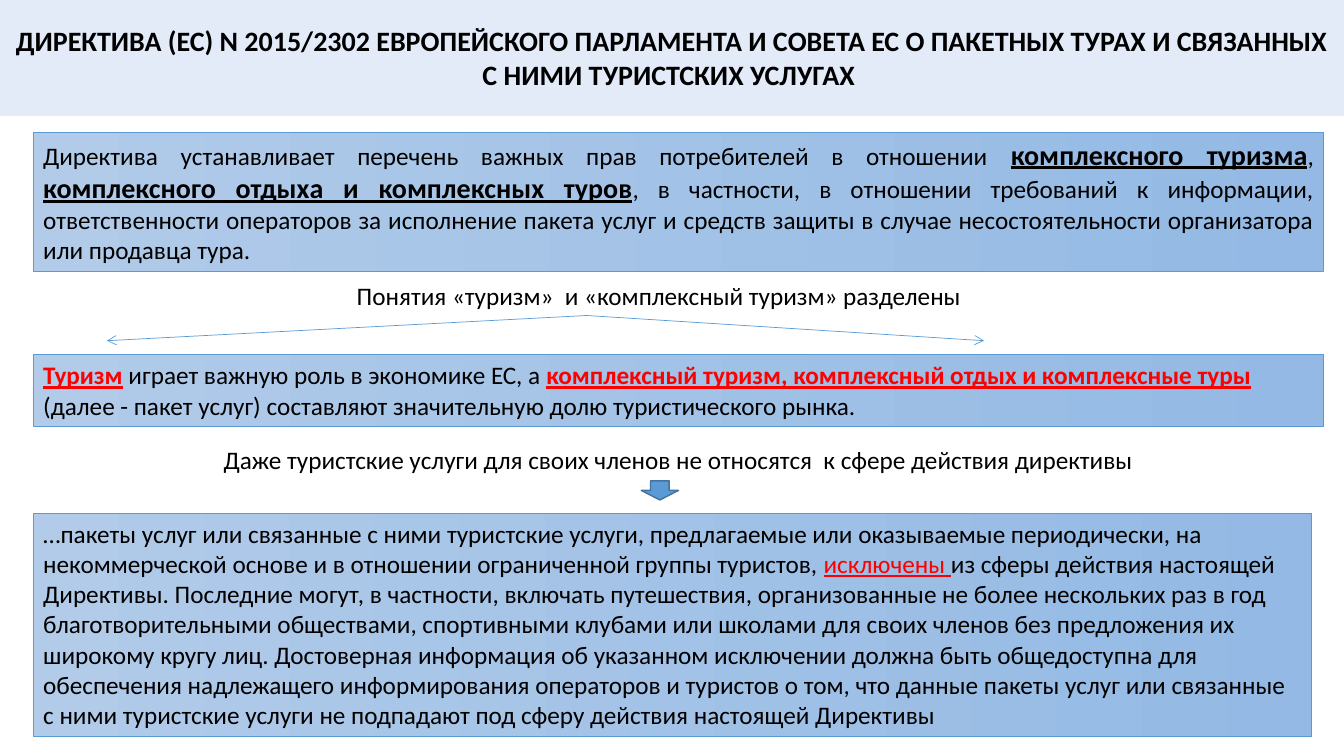
from lxml import etree
from pptx import Presentation
from pptx.dml.color import RGBColor
from pptx.enum.shapes import MSO_CONNECTOR, MSO_SHAPE
from pptx.enum.text import MSO_ANCHOR, MSO_AUTO_SIZE, PP_ALIGN
from pptx.oxml.ns import qn
from pptx.util import Inches, Pt

COLORS = {
    "band": "E3EBF9", "panel_left": "B1CBE9", "panel_right": "93B9E4",
    "blue": "5B9BD5", "arrow_edge": "43739E", "black": "000000", "red": "FF0000",
}


def rgb(name):
    return RGBColor.from_string(COLORS[name])


def add_runs(p, runs):
    """Each run is (text, size, color, bold, underline)."""
    for text, size, color, bold, underline in runs:
        r = p.add_run()
        r.text = text
        r.font.name = "Calibri"
        r.font.size = Pt(size)
        r.font.bold = bold
        r.font.underline = underline
        r.font.color.rgb = rgb(color)


prs = Presentation()
prs.slide_width, prs.slide_height = Inches(13.33), Inches(7.5)
s = prs.slides.add_slide(prs.slide_layouts[5])

# Title band
title = s.shapes.title
title.left, title.top = Inches(0), Inches(0)
title.width, title.height = Inches(13.33), Inches(1.14)
title.fill.solid()
title.fill.fore_color.rgb = rgb("band")
title.line.color.rgb = rgb("band")
title.line.width = Pt(1)
tf = title.text_frame
tf.auto_size = MSO_AUTO_SIZE.NONE
tf.word_wrap = True
tf.vertical_anchor = MSO_ANCHOR.MIDDLE
p = tf.paragraphs[0]
p.alignment = PP_ALIGN.CENTER
add_runs(p, [("ДИРЕКТИВА (ЕС) N 2015/2302 ЕВРОПЕЙСКОГО ПАРЛАМЕНТА И СОВЕТА ЕС О ПАКЕТНЫХ "
              "ТУРАХ И СВЯЗАННЫХ С НИМИ ТУРИСТСКИХ УСЛУГАХ ", 20, "black", True, False)])

# Gradient panels: top, width, height, alignment, runs
panels = [
    (1.31, 12.8, 1.38, PP_ALIGN.JUSTIFY, [
        ("Директива устанавливает перечень важных прав потребителей в отношении ",
         18, "black", False, False),
        ("комплексного туризма", 20, "black", True, True),
        (", ", 18, "black", False, False),
        ("комплексного отдыха и комплексных туров", 20, "black", True, True),
        (", в частности, в отношении требований к информации, ответственности операторов "
         "за исполнение пакета услуг и средств защиты в случае несостоятельности "
         "организатора или продавца тура. ", 18, "black", False, False),
    ]),
    (3.52, 12.8, 0.71, PP_ALIGN.LEFT, [
        ("Туризм", 18, "red", True, True),
        (" играет важную роль в экономике ЕС, а ", 18, "black", False, False),
        ("комплексный туризм, комплексный отдых и комплексные туры ", 18, "red", True, True),
        ("(далее - пакет услуг) составляют значительную долю туристического рынка.",
         18, "black", False, False),
    ]),
    (5.09, 12.68, 2.22, PP_ALIGN.LEFT, [
        ("…пакеты услуг или связанные с ними туристские услуги, предлагаемые или "
         "оказываемые периодически, на некоммерческой основе и в отношении ограниченной "
         "группы туристов, ", 18, "black", False, False),
        ("исключены ", 18, "red", False, True),
        ("из сферы действия настоящей Директивы. Последние могут, в частности, включать "
         "путешествия, организованные не более нескольких раз в год благотворительными "
         "обществами, спортивными клубами или школами для своих членов без предложения их "
         "широкому кругу лиц. Достоверная информация об указанном исключении должна быть "
         "общедоступна для обеспечения надлежащего информирования операторов и туристов о "
         "том, что данные пакеты услуг или связанные с ними туристские услуги не подпадают "
         "под сферу действия настоящей Директивы", 18, "black", False, False),
    ]),
]
for top, width, height, align, runs in panels:
    sp = s.shapes.add_shape(MSO_SHAPE.RECTANGLE, Inches(0.33), Inches(top),
                            Inches(width), Inches(height))
    sp.shadow.inherit = False
    sp.fill.gradient()
    sp.fill.gradient_angle = 0
    for stop, color in zip(sp.fill.gradient_stops, ("panel_left", "panel_right")):
        stop.color.rgb = rgb(color)
    sp.line.color.rgb = rgb("blue")
    sp.line.width = Pt(0.5)
    tf = sp.text_frame
    tf.word_wrap = True
    tf.auto_size = MSO_AUTO_SIZE.SHAPE_TO_FIT_TEXT
    tf.vertical_anchor = MSO_ANCHOR.TOP
    p = tf.paragraphs[0]
    p.alignment = align
    add_runs(p, runs)

# Statements between the panels
statements = [
    (3.44, 2.73, 6.24, False, "Понятия «туризм»  и «комплексный туризм» разделены"),
    (2.12, 4.36, 11.2, True,
     "Даже туристские услуги для своих членов не относятся  к сфере действия директивы"),
]
for left, top, width, wrap, text in statements:
    sp = s.shapes.add_textbox(Inches(left), Inches(top), Inches(width), Inches(0.4))
    tf = sp.text_frame
    tf.word_wrap = wrap
    tf.auto_size = MSO_AUTO_SIZE.SHAPE_TO_FIT_TEXT
    add_runs(tf.paragraphs[0], [(text, 18, "black", False, False)])

# Arrows branching to the two notions
for end_x in (1.06, 9.76):
    branch = s.shapes.add_connector(MSO_CONNECTOR.STRAIGHT, Inches(5.82), Inches(3.13),
                                    Inches(end_x), Inches(3.38))
    branch.line.color.rgb = rgb("blue")
    branch.line.width = Pt(0.5)
    etree.SubElement(branch.line._get_or_add_ln(), qn("a:tailEnd"), type="arrow")
    etree.SubElement(branch._element.spPr, qn("a:effectLst"))

# Arrow down to the exclusion
down = s.shapes.add_shape(MSO_SHAPE.DOWN_ARROW, Inches(6.36), Inches(4.77),
                          Inches(0.37), Inches(0.19))
down.shadow.inherit = False
down.fill.solid()
down.fill.fore_color.rgb = rgb("blue")
down.line.color.rgb = rgb("arrow_edge")
down.line.width = Pt(1)

prs.save("out.pptx")
